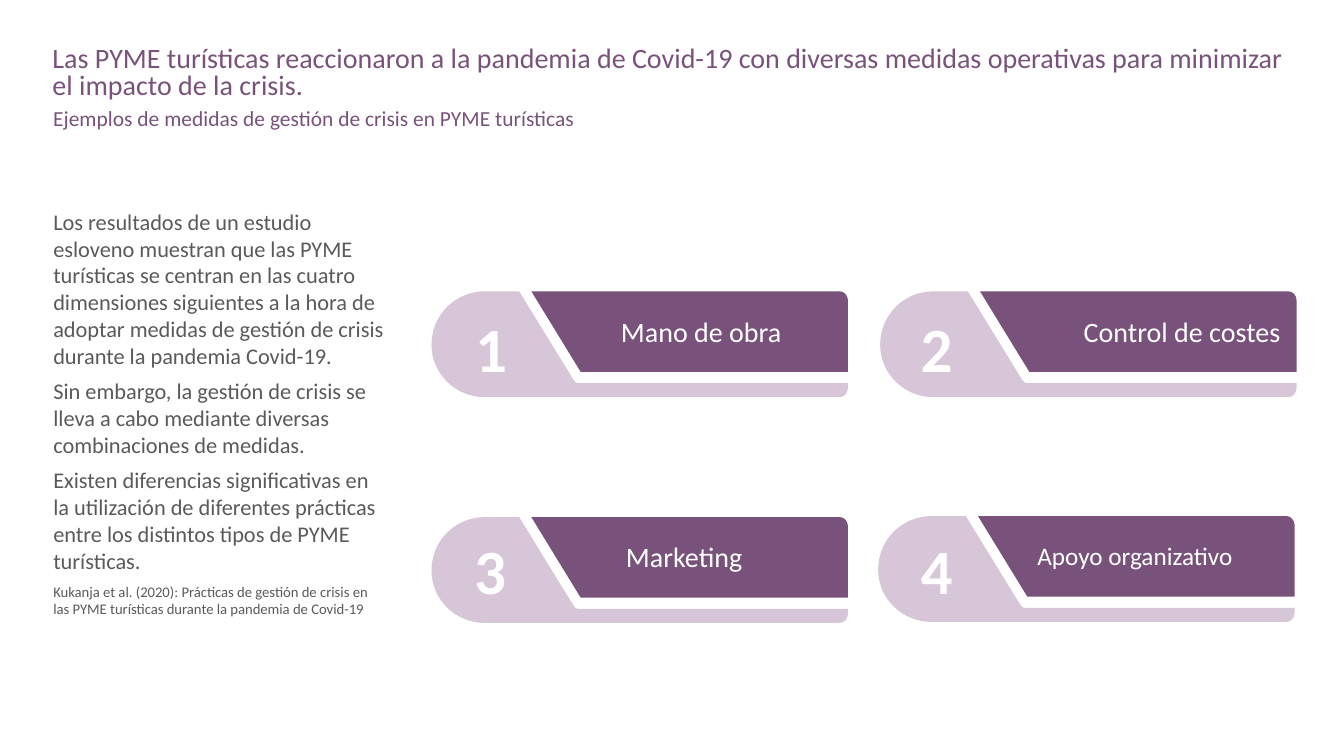
from pptx import Presentation
from pptx.dml.color import RGBColor
from pptx.enum.text import MSO_ANCHOR, MSO_AUTO_SIZE, PP_ALIGN
from pptx.oxml.ns import qn
from pptx.util import Inches, Pt

PURPLE = RGBColor(0x79, 0x52, 0x7B)
LILAC = RGBColor(0xD7, 0xC6, 0xD8)
GRAY = RGBColor(0x59, 0x5A, 0x59)
WHITE = RGBColor(0xFF, 0xFF, 0xFF)

BASE_OUTLINE = [
    [(1.45, 0.91)],
    [(1.44, 0.91), (1.42, 0.9), (1.41, 0.88)],
    [(0.87, 0)],
    [(0.53, 0)],
    [(0.24, 0), (0, 0.23), (0, 0.53)],
    [(0, 0.82), (0.24, 1.05), (0.53, 1.05)],
    [(4.05, 1.05)],
    [(4.09, 1.05), (4.13, 1.01), (4.13, 0.96)],
    [(4.13, 0.91)],
]
PANEL_OUTLINE = [
    [(1.48, 0.8)],
    [(4.13, 0.8)],
    [(4.13, 0.09)],
    [(4.13, 0.04), (4.09, 0), (4.05, 0)],
    [(0.99, 0)],
]

TITLE = (
    "Las PYME turísticas reaccionaron a la pandemia de Covid-19 con diversas "
    "medidas operativas para minimizar el impacto de la crisis."
)
SUBTITLE = "Ejemplos de medidas de gestión de crisis en PYME turísticas"
FINDINGS = [
    (
        "Los resultados de un estudio esloveno muestran que las PYME turísticas "
        "se centran en las cuatro dimensiones siguientes a la hora de adoptar "
        "medidas de gestión de crisis durante la pandemia Covid-19.",
        16,
    ),
    (
        "Sin embargo, la gestión de crisis se lleva a cabo mediante diversas "
        "combinaciones de medidas.",
        16,
    ),
    (
        "Existen diferencias significativas en la utilización de diferentes "
        "prácticas entre los distintos tipos de PYME turísticas.",
        16,
    ),
    (
        "Kukanja et al. (2020): Prácticas de gestión de crisis en las PYME "
        "turísticas durante la pandemia de Covid-19",
        10.5,
    ),
]
CARDS = [
    {"corner": (4.28, 2.89), "number": (0.33, 0.13), "label": (1.78, 0.18),
     "text": "Mano de obra", "size": 20, "height": 0.44},
    {"corner": (8.73, 2.89), "number": (0.3, 0.13), "label": (1.92, 0.18),
     "text": "Control de costes", "size": 20, "height": 0.44},
    {"corner": (4.28, 5.13), "number": (0.32, 0.09), "label": (1.83, 0.17),
     "text": "Marketing", "size": 20, "height": 0.44},
    {"corner": (8.71, 5.12), "number": (0.32, 0.1), "label": (1.48, 0.19),
     "text": "Apoyo organizativo", "size": 18, "height": 0.4},
]


def apply_format(target, values):
    for name, value in values.items():
        setattr(target, name, value)


def place(shape, box):
    names = ("left", "top", "width", "height")
    apply_format(shape, dict(zip(names, map(Inches, box))))


def fill_text(shape, paragraphs, color, anchor=MSO_ANCHOR.TOP,
              fit=MSO_AUTO_SIZE.NONE, bold=False, **layout):
    frame = shape.text_frame
    apply_format(frame, {"word_wrap": True, "auto_size": fit, "vertical_anchor": anchor})
    for index, (text, size) in enumerate(paragraphs):
        paragraph = frame.add_paragraph() if index else frame.paragraphs[0]
        run = paragraph.add_run()
        run.text = text
        apply_format(paragraph, {
            "alignment": PP_ALIGN.LEFT,
            "space_before": Pt(6 if index else 0),
            **layout,
        })
        apply_format(run.font, {"name": "Calibri", "size": Pt(size), "bold": bold})
        run.font.color.rgb = color


def add_text(slide, box, paragraphs, color, **options):
    shape = slide.shapes.add_textbox(*map(Inches, box))
    fill_text(shape, paragraphs, color, **options)


def bend_curves(shape, segments):
    lines = iter(shape.element.findall(".//" + qn("a:lnTo")))
    for segment in segments:
        group = [next(lines) for _ in segment]
        if len(group) == 3:
            curve = group[0].makeelement(qn("a:cubicBezTo"))
            group[0].addprevious(curve)
            for line in group:
                curve.append(line[0])
                line.getparent().remove(line)


def add_outline(slide, left, top, segments, color):
    corners = [
        (Inches(left + x), Inches(top + y)) for segment in segments for x, y in segment
    ]
    builder = slide.shapes.build_freeform(*corners[0])
    builder.add_line_segments(corners[1:], close=False)
    shape = builder.convert_to_shape()
    bend_curves(shape, segments[1:])
    outline = shape.element.find(".//" + qn("a:path"))
    outline.append(outline.makeelement(qn("a:close")))
    shape.shadow.inherit = False
    shape.fill.solid()
    shape.fill.fore_color.rgb = color
    shape.line.fill.background()


def add_heading(slide, box):
    left, top, width, height = box
    title = slide.shapes.title
    place(title, box)
    fill_text(title, [(TITLE, 20)], PURPLE, line_spacing=0.8)
    subtitle_box = (left + 0.01, top + height, width + 0.02, 0.28)
    add_text(slide, subtitle_box, [(SUBTITLE, 15.3)], PURPLE, line_spacing=0.7)


def add_findings(slide, box):
    add_text(slide, box, FINDINGS, GRAY, anchor=MSO_ANCHOR.MIDDLE)


def add_card(slide, number, card):
    left, top = card["corner"]
    add_outline(slide, left, top, BASE_OUTLINE, LILAC)
    add_outline(slide, left, top, PANEL_OUTLINE, PURPLE)
    number_x, number_y = card["number"]
    add_text(slide, (left + number_x, top + number_y, 0.52, 0.86),
             [(str(number), 45)], WHITE, fit=MSO_AUTO_SIZE.SHAPE_TO_FIT_TEXT,
             bold=True, alignment=PP_ALIGN.CENTER)
    label_x, label_y = card["label"]
    add_text(slide, (left + label_x, top + label_y, 2.68, card["height"]),
             [(card["text"], card["size"])], WHITE,
             fit=MSO_AUTO_SIZE.SHAPE_TO_FIT_TEXT)


def main():
    presentation = Presentation()
    apply_format(presentation, {"slide_width": Inches(13.33), "slide_height": Inches(7.5)})
    slide = presentation.slides.add_slide(presentation.slide_layouts[5])
    add_heading(slide, (0.42, 0.42, 12.54, 0.64))
    add_findings(slide, (0.43, 1.66, 3.49, 4.87))
    for number, card in enumerate(CARDS, start=1):
        add_card(slide, number, card)
    presentation.save("out.pptx")


if __name__ == "__main__":
    main()
